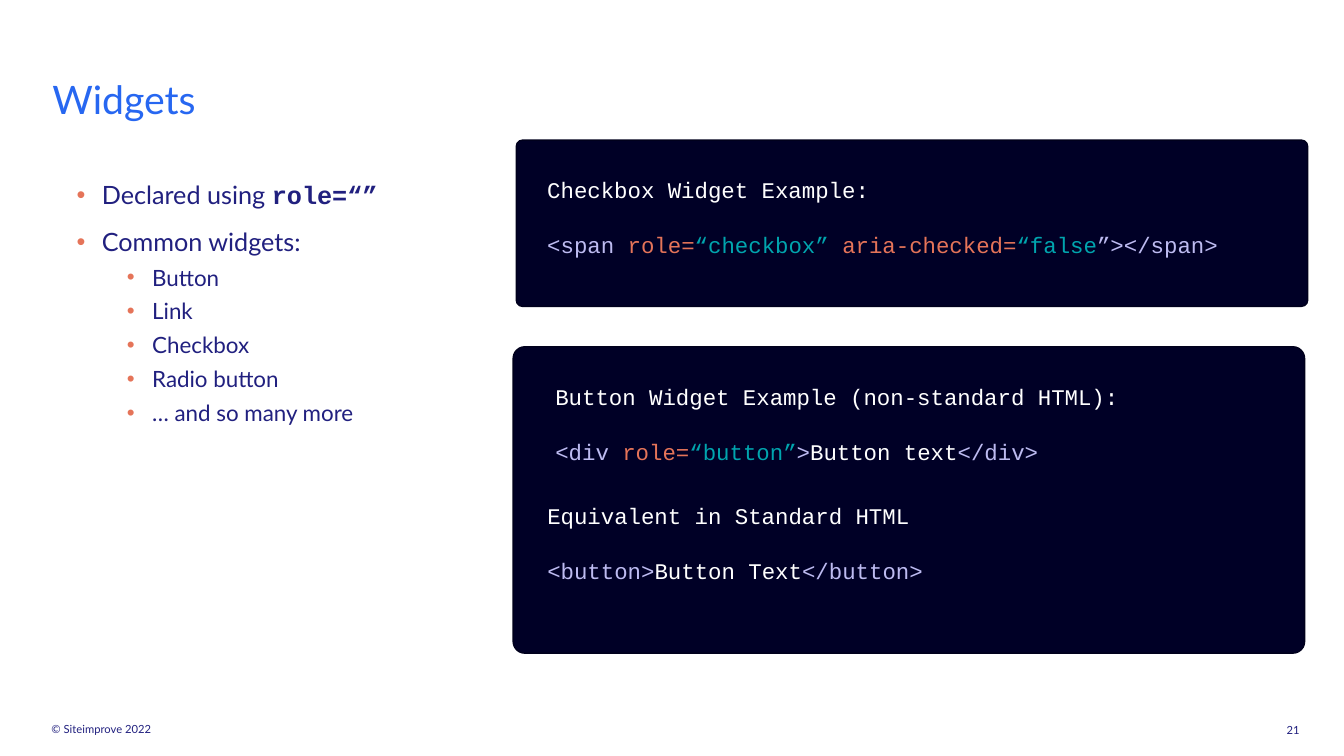
from dataclasses import dataclass

from lxml.etree import SubElement
from pptx import Presentation
from pptx.dml.color import RGBColor
from pptx.enum.shapes import MSO_SHAPE
from pptx.enum.text import MSO_ANCHOR, PP_ALIGN
from pptx.oxml.ns import qn
from pptx.util import Inches, Pt

SLIDE_WIDTH = Inches(13.33)
SLIDE_HEIGHT = Inches(7.5)


@dataclass(frozen=True)
class Theme:
    text_font: str = "Lato"
    code_font: str = "Courier New"
    title: str = "2767F1"
    body: str = "21207F"
    bullet: str = "E57459"
    panel: str = "000026"
    panel_line: str = "00001C"
    plain: str = "FFFFFF"
    tag: str = "BDBBF1"
    attribute: str = "E57459"
    value: str = "00A5AE"
    title_size: int = 28
    body_size: int = 18
    detail_size: int = 16
    code_size: int = 16
    code_gap: int = 20
    small_size: int = 8


THEME = Theme()


def place(left, top, width, height):
    """Turn percentages of the slide's width and height into lengths."""
    return (
        round(SLIDE_WIDTH * left / 100),
        round(SLIDE_HEIGHT * top / 100),
        round(SLIDE_WIDTH * width / 100),
        round(SLIDE_HEIGHT * height / 100),
    )


def add_text_frame(slide, area, anchor=MSO_ANCHOR.TOP, inset=(0, 0)):
    frame = slide.shapes.add_textbox(*place(*area)).text_frame
    frame.word_wrap = True
    frame.vertical_anchor = anchor
    frame.margin_left = frame.margin_right = Inches(inset[0])
    frame.margin_top = frame.margin_bottom = Inches(inset[1])
    return frame


def next_paragraph(frame, space_before=0):
    """Reuse the empty first paragraph; put space before later ones only."""
    first = frame.paragraphs[0]
    if not first.runs:
        return first
    paragraph = frame.add_paragraph()
    paragraph.space_before = Pt(space_before)
    return paragraph


def write(paragraph, text, size, color, font=THEME.text_font, bold=False):
    run = paragraph.add_run()
    run.text = text
    run.font.name = font
    run.font.size = Pt(size)
    run.font.bold = bold
    run.font.color.rgb = RGBColor.from_string(color)


def add_label(slide, area, text, size, color, anchor=MSO_ANCHOR.TOP,
              align=PP_ALIGN.LEFT, line_spacing=1.0):
    paragraph = add_text_frame(slide, area, anchor).paragraphs[0]
    paragraph.alignment = align
    paragraph.line_spacing = line_spacing
    write(paragraph, text, size, color)


def add_bullet(frame, level, space_before):
    paragraph = next_paragraph(frame, space_before)
    paragraph.level = level
    properties = paragraph._p.get_or_add_pPr()
    properties.set("marL", str(Inches(0.25 + 0.5 * level)))
    properties.set("indent", str(Inches(-0.25)))
    color = SubElement(properties, qn("a:buClr"))
    SubElement(color, qn("a:srgbClr"), val=THEME.bullet)
    SubElement(properties, qn("a:buFont"), typeface="Arial")
    SubElement(properties, qn("a:buChar"), char="•")
    return paragraph


def add_widget_list(slide, area):
    frame = add_text_frame(slide, area)
    declared = add_bullet(frame, level=0, space_before=12)
    write(declared, "Declared using ", THEME.body_size, THEME.body)
    write(declared, "role=“”", THEME.body_size, THEME.body,
          font=THEME.code_font, bold=True)
    common = add_bullet(frame, level=0, space_before=12)
    write(common, "Common widgets:", THEME.body_size, THEME.body)
    for widget in ("Button", "Link", "Checkbox", "Radio button", "… and so many more"):
        item = add_bullet(frame, level=1, space_before=5)
        write(item, widget, THEME.detail_size, THEME.body)


def add_panel(slide, area):
    panel = slide.shapes.add_shape(MSO_SHAPE.ROUNDED_RECTANGLE, *place(*area))
    panel.adjustments[0] = 0.038
    panel.shadow.inherit = False
    panel.fill.solid()
    panel.fill.fore_color.rgb = RGBColor.from_string(THEME.panel)
    panel.line.color.rgb = RGBColor.from_string(THEME.panel_line)
    panel.line.width = Pt(1)


def add_code_example(slide, area, heading, code):
    """Write a heading and, below it, one code line of (text, colour) pairs."""
    frame = add_text_frame(slide, area, inset=(0.1, 0.05))
    for line in ([(heading, THEME.plain)], code):
        paragraph = next_paragraph(frame, THEME.code_gap)
        for text, color in line:
            write(paragraph, text, THEME.code_size, color, font=THEME.code_font)


def main():
    presentation = Presentation()
    presentation.slide_width = SLIDE_WIDTH
    presentation.slide_height = SLIDE_HEIGHT
    slide = presentation.slides.add_slide(presentation.slide_layouts[6])

    add_label(slide, (3.83, 94.67, 27.23, 3.6), "© Siteimprove 2022",
              THEME.small_size, THEME.body, anchor=MSO_ANCHOR.MIDDLE)
    add_label(slide, (3.9, 10.67, 53.79, 5.73), "Widgets",
              THEME.title_size, THEME.title, line_spacing=0.9)
    add_widget_list(slide, (5.7, 23.73, 31.88, 69.07))

    add_panel(slide, (38.41, 18.53, 58.89, 22))
    add_code_example(slide, (39.98, 22.67, 54.31, 14.4), "Checkbox Widget Example:", [
        ("<span ", THEME.tag),
        ("role=", THEME.attribute),
        ("“checkbox” ", THEME.value),
        ("aria-checked=", THEME.attribute),
        ("“false", THEME.value),
        ("”></span>", THEME.tag),
    ])

    add_panel(slide, (38.18, 45.87, 58.89, 40.53))
    add_code_example(slide, (40.58, 50, 47.26, 18),
                     "Button Widget Example (non-standard HTML):", [
        ("<div ", THEME.tag),
        ("role=", THEME.attribute),
        ("“button”", THEME.value),
        (">", THEME.tag),
        ("Button text", THEME.plain),
        ("</div>", THEME.tag),
    ])
    add_code_example(slide, (39.98, 65.73, 50.79, 14.4), "Equivalent in Standard HTML", [
        ("<button>", THEME.tag),
        ("Button Text", THEME.plain),
        ("</button>", THEME.tag),
    ])

    add_label(slide, (94.3, 92.93, 3.83, 7.2), "21", THEME.small_size, THEME.body,
              anchor=MSO_ANCHOR.MIDDLE, align=PP_ALIGN.CENTER)
    presentation.save("out.pptx")


if __name__ == "__main__":
    main()
